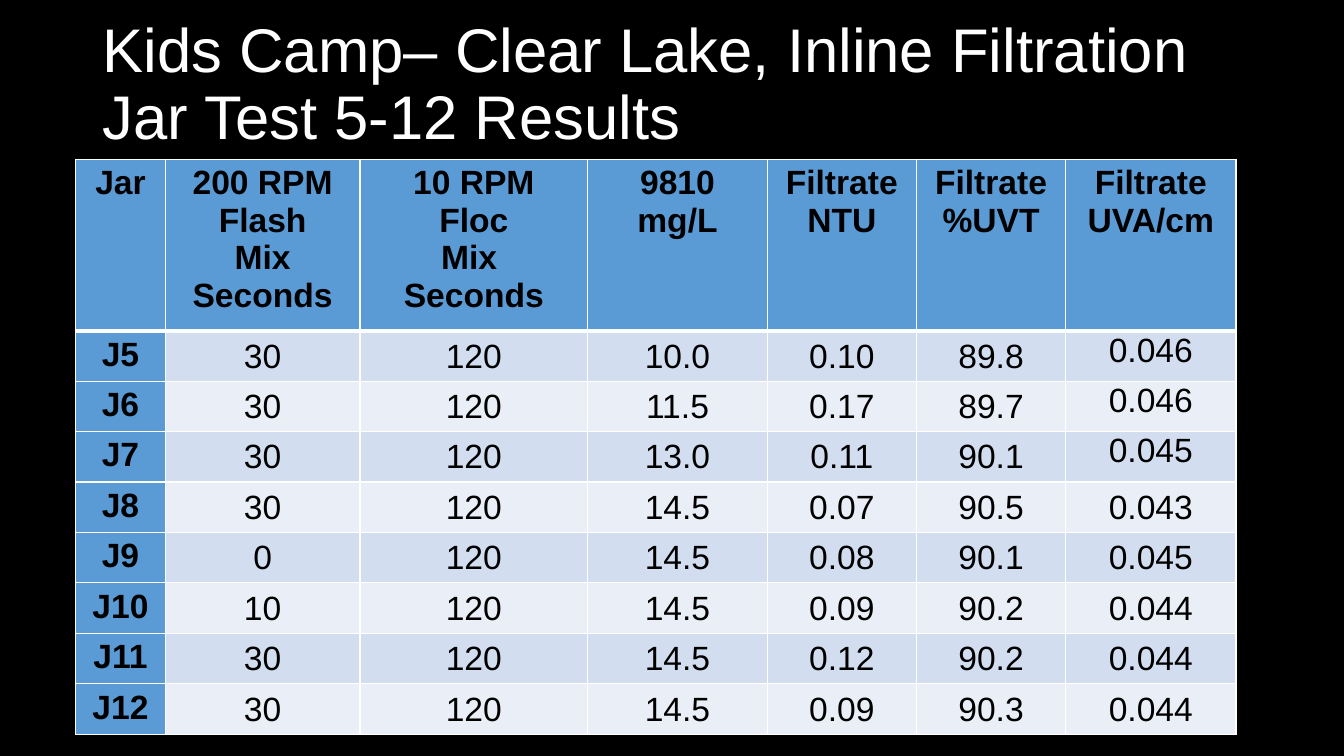
from dataclasses import dataclass

from lxml.etree import SubElement
from pptx import Presentation
from pptx.dml.color import RGBColor
from pptx.enum.text import MSO_ANCHOR as Anchor, PP_ALIGN as Align
from pptx.oxml.ns import qn
from pptx.slide import Slide
from pptx.table import Table, _Cell as Cell
from pptx.text.text import _Paragraph as Paragraph
from pptx.util import Emu, Pt

PX = 9144
FONT = "Arial"
COLORS = {
    "background": "000000",
    "title": "FFFFFF",
    "text": "000000",
    "border": "FFFFFF",
    "header": "5B9BD5",
    "odd": "D2DEEF",
    "even": "EAEFF7",
}
TITLE_LINES = ("Kids Camp– Clear Lake, Inline Filtration", "Jar Test 5-12 Results")
HEADER_HEIGHT = 158
ROW_HEIGHT = 47
TOP_ALIGNED_UVA = ("J5", "J6", "J7")


@dataclass(frozen=True)
class Column:
    width: int
    heading: tuple[str, ...]


@dataclass(frozen=True)
class JarResult:
    jar: str
    flash_mix: str
    floc_mix: str
    dose: str
    ntu: str
    uvt: str
    uva: str

    def readings(self) -> tuple[str, ...]:
        return self.flash_mix, self.floc_mix, self.dose, self.ntu, self.uvt, self.uva


COLUMNS = (
    Column(89, ("Jar",)),
    Column(193, ("200 RPM", "Flash", "Mix", "Seconds")),
    Column(226, ("10 RPM", "Floc", "Mix ", "Seconds")),
    Column(178, ("9810", "mg/L")),
    Column(148, ("Filtrate", "NTU")),
    Column(148, ("Filtrate", "%UVT")),
    Column(169, ("Filtrate", "UVA/cm")),
)
RESULTS = (
    JarResult("J5", "30", "120", "10.0", "0.10", "89.8", "0.046"),
    JarResult("J6", "30", "120", "11.5", "0.17", "89.7", "0.046"),
    JarResult("J7", "30", "120", "13.0", "0.11", "90.1", "0.045"),
    JarResult("J8", "30", "120", "14.5", "0.07", "90.5", "0.043"),
    JarResult("J9", "0", "120", "14.5", "0.08", "90.1", "0.045"),
    JarResult("J10", "10", "120", "14.5", "0.09", "90.2", "0.044"),
    JarResult("J11", "30", "120", "14.5", "0.12", "90.2", "0.044"),
    JarResult("J12", "30", "120", "14.5", "0.09", "90.3", "0.044"),
)


def px(length: int) -> Emu:
    return Emu(length * PX)


def color(name: str) -> RGBColor:
    return RGBColor.from_string(COLORS[name])


def add_run(paragraph: Paragraph, text: str, size: int, color_name: str, bold: bool = False) -> None:
    run = paragraph.add_run()
    run.text = text
    run.font.name = FONT
    run.font.size = Pt(size)
    run.font.bold = bold
    run.font.color.rgb = color(color_name)


def add_title(slide: Slide) -> None:
    shape = slide.shapes.add_textbox(px(92), px(13), px(1150), px(145))
    frame = shape.text_frame
    frame.word_wrap = True
    frame.vertical_anchor = Anchor.MIDDLE
    paragraph = frame.paragraphs[0]
    paragraph.line_spacing = 0.9
    for index, line in enumerate(TITLE_LINES):
        if index:
            paragraph.add_line_break()
        add_run(paragraph, line, 44, "title")


def add_borders(cell: Cell, top: int, bottom: int) -> None:
    properties = cell._tc.get_or_add_tcPr()
    for side, width in (("L", 1), ("R", 1), ("T", top), ("B", bottom)):
        line = SubElement(properties, qn(f"a:ln{side}"), w=str(Pt(width)))
        fill = SubElement(line, qn("a:solidFill"))
        SubElement(fill, qn("a:srgbClr"), val=COLORS["border"])


def fill_cell(cell: Cell, lines: tuple[str, ...], fill: str, bold: bool, row: int) -> None:
    add_borders(cell, top=3 if row == 1 else 1, bottom=3 if row == 0 else 1)
    cell.fill.solid()
    cell.fill.fore_color.rgb = color(fill)
    frame = cell.text_frame
    for index, line in enumerate(lines):
        paragraph = frame.add_paragraph() if index else frame.paragraphs[0]
        paragraph.alignment = Align.CENTER
        add_run(paragraph, line, 24, "text", bold)


def fill_reading(cell: Cell, text: str, row: int, anchor: Anchor) -> None:
    fill_cell(cell, (text,), "odd" if row % 2 else "even", False, row)
    cell.margin_left = cell.margin_right = cell.margin_top = px(1)
    cell.margin_bottom = 0
    cell.vertical_anchor = anchor


def fill_result(table: Table, row: int, result: JarResult) -> None:
    fill_cell(table.cell(row, 0), (result.jar,), "header", True, row)
    last = len(COLUMNS) - 1
    for index, text in enumerate(result.readings(), start=1):
        at_top = index == last and result.jar in TOP_ALIGNED_UVA
        fill_reading(table.cell(row, index), text, row, Anchor.TOP if at_top else Anchor.MIDDLE)


def add_results_table(slide: Slide) -> None:
    width = sum(column.width for column in COLUMNS)
    height = HEADER_HEIGHT + ROW_HEIGHT * len(RESULTS)
    shape = slide.shapes.add_table(
        len(RESULTS) + 1, len(COLUMNS), px(75), px(158), px(width), px(height)
    )
    table = shape.table
    table.first_col = True
    table.rows[0].height = px(HEADER_HEIGHT)
    for index, column in enumerate(COLUMNS):
        table.columns[index].width = px(column.width)
        fill_cell(table.cell(0, index), column.heading, "header", True, 0)
    for row, result in enumerate(RESULTS, start=1):
        table.rows[row].height = px(ROW_HEIGHT)
        fill_result(table, row, result)


def main() -> None:
    presentation = Presentation()
    presentation.slide_width = px(1333)
    presentation.slide_height = px(750)
    slide = presentation.slides.add_slide(presentation.slide_layouts[6])
    slide.background.fill.solid()
    slide.background.fill.fore_color.rgb = color("background")
    add_title(slide)
    add_results_table(slide)
    presentation.save("out.pptx")


if __name__ == "__main__":
    main()
